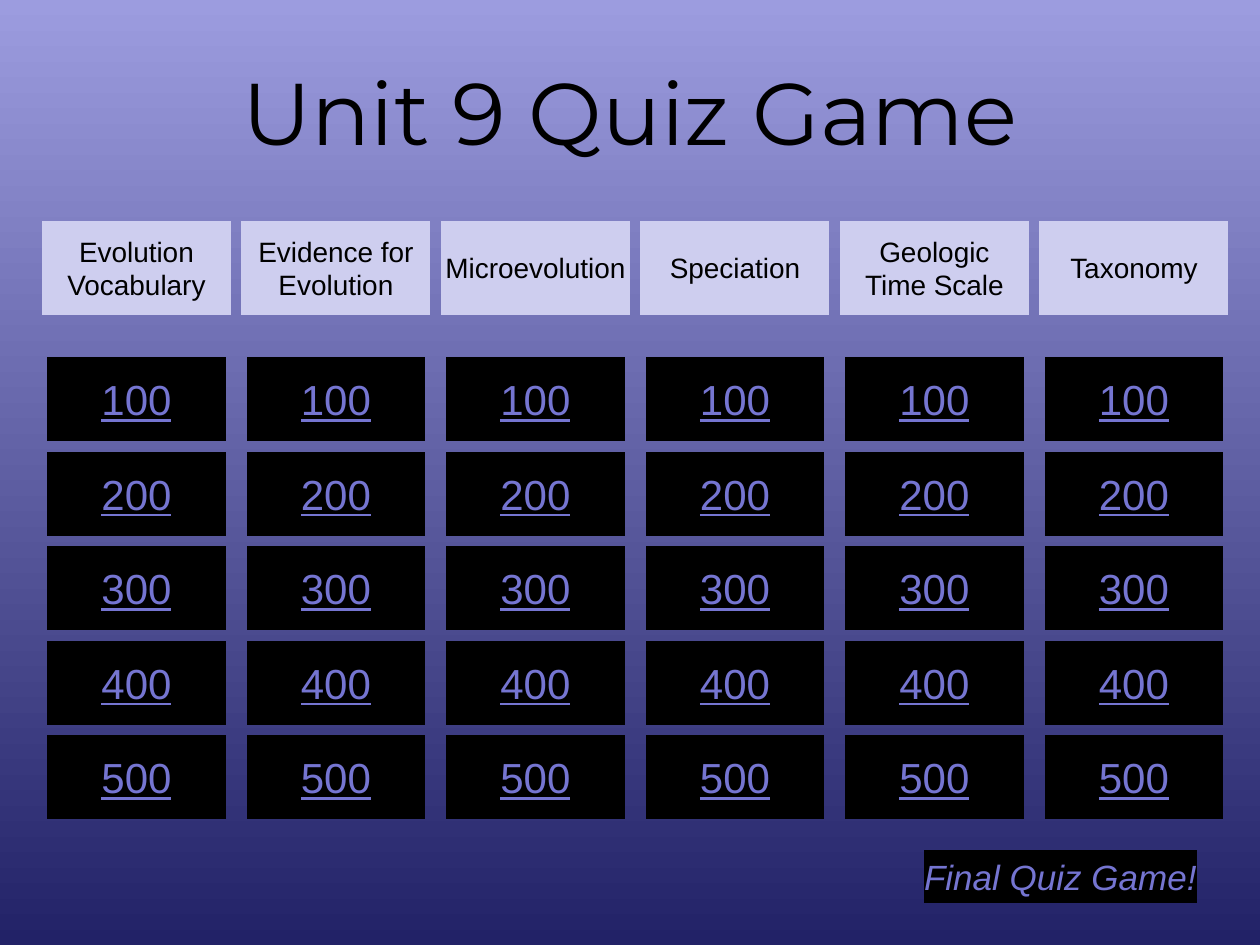
from pptx import Presentation
from pptx.dml.color import RGBColor
from pptx.enum.shapes import MSO_SHAPE
from pptx.enum.text import MSO_ANCHOR, PP_ALIGN
from pptx.util import Pt

BUTTON = MSO_SHAPE.ACTION_BUTTON_CUSTOM
MIDDLE = MSO_ANCHOR.MIDDLE
CENTER = PP_ALIGN.CENTER

BLACK, LAVENDER, VIOLET = "000000", "CECEEF", "7575D1"
SKY_TOP, SKY_BOTTOM = "9C9CDF", "222267"

CATEGORIES = [
    "Evolution\nVocabulary",
    "Evidence for\nEvolution",
    "Microevolution",
    "Speciation",
    "Geologic\nTime Scale",
    "Taxonomy",
]
POINT_VALUES = [100, 200, 300, 400, 500]

# Board grid, in points
BOARD_LEFT, COLUMN_PITCH = 24, 114
HEADER_TOP, HEADER_WIDTH, HEADER_HEIGHT = 126, 108, 54
VALUES_TOP, ROW_PITCH = 204, 54
VALUE_WIDTH, VALUE_HEIGHT = 102, 48
VALUE_INDENT = (HEADER_WIDTH - VALUE_WIDTH) / 2


def rgb(hex_color):
    return RGBColor.from_string(hex_color)


def set_text(shape, text, size, color, font="Arial", wrap=False,
             underline=None, italic=None):
    frame = shape.text_frame
    frame.text = text
    frame.word_wrap = wrap
    frame.vertical_anchor = MIDDLE
    for paragraph in frame.paragraphs:
        paragraph.alignment = CENTER
        for run in paragraph.runs:
            run.font.name = font
            run.font.size = Pt(size)
            run.font.color.rgb = rgb(color)
            run.font.underline = underline
            run.font.italic = italic


def add_button(slide, left, top, width, height, fill, text, size, color, **style):
    button = slide.shapes.add_shape(BUTTON, Pt(left), Pt(top), Pt(width), Pt(height))
    button.shadow.inherit = False
    button.fill.solid()
    button.fill.fore_color.rgb = rgb(fill)
    button.line.fill.background()
    set_text(button, text, size, color, **style)


def paint_background(slide):
    fill = slide.background.fill
    fill.gradient()
    fill.gradient_angle = 270  # counter-clockwise, so top to bottom
    for stop, color in zip(fill.gradient_stops, (SKY_TOP, SKY_BOTTOM)):
        stop.color.rgb = rgb(color)


def add_title(slide, text):
    title = slide.shapes.add_textbox(Pt(24), Pt(12), Pt(672), Pt(102))
    set_text(title, text, 50, BLACK, font="Montserrat", wrap=True)


def add_category(slide, column, category):
    left = BOARD_LEFT + column * COLUMN_PITCH
    add_button(slide, left, HEADER_TOP, HEADER_WIDTH, HEADER_HEIGHT,
               LAVENDER, category, 16, BLACK)


def add_values(slide, column):
    left = BOARD_LEFT + VALUE_INDENT + column * COLUMN_PITCH
    for row, value in enumerate(POINT_VALUES):
        add_button(slide, left, VALUES_TOP + row * ROW_PITCH, VALUE_WIDTH,
                   VALUE_HEIGHT, BLACK, str(value), 24, VIOLET, underline=True)


def main():
    presentation = Presentation()
    presentation.slide_width, presentation.slide_height = Pt(720), Pt(540)
    slide = presentation.slides.add_slide(presentation.slide_layouts[6])

    paint_background(slide)
    add_title(slide, "Unit 9 Quiz Game")

    # Category headers, then the point values below them
    for column, category in enumerate(CATEGORIES):
        add_category(slide, column, category)
    for column in range(len(CATEGORIES)):
        add_values(slide, column)

    # Final round
    add_button(slide, 528, 486, 156, 30, BLACK, "Final Quiz Game!", 20, VIOLET,
               italic=True)

    presentation.save("out.pptx")


if __name__ == "__main__":
    main()
